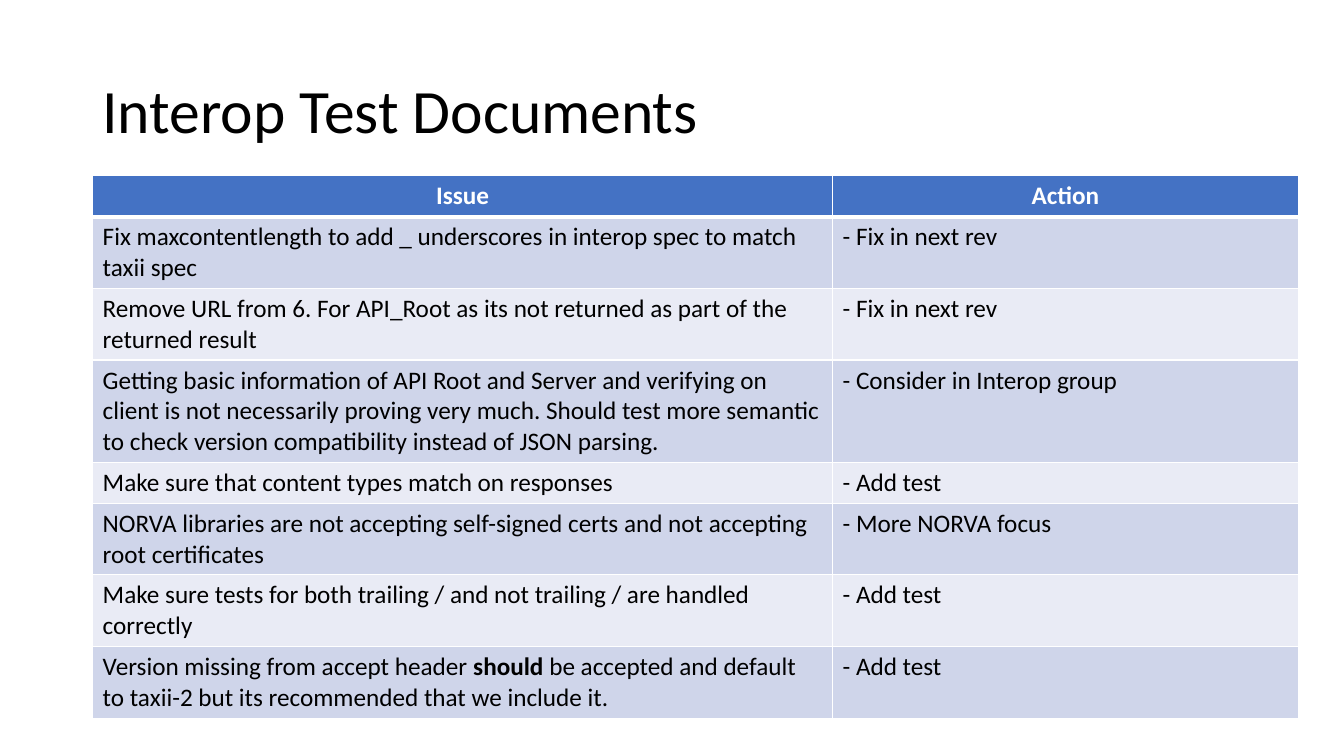
from lxml import etree
from pptx import Presentation
from pptx.dml.color import RGBColor
from pptx.enum.text import MSO_ANCHOR, PP_ALIGN
from pptx.oxml.ns import qn
from pptx.util import Pt

LEFT, CENTER = PP_ALIGN.LEFT, PP_ALIGN.CENTER
MIDDLE = MSO_ANCHOR.MIDDLE

BLACK = RGBColor(0x00, 0x00, 0x00)
WHITE = RGBColor(0xFF, 0xFF, 0xFF)
HEADER_BLUE = RGBColor(0x44, 0x72, 0xC4)
BANDS = (RGBColor(0xCF, 0xD5, 0xEA), RGBColor(0xE9, 0xEB, 0xF5))

FONT = "Calibri"
TITLE_FORMAT = {"name": FONT, "size": Pt(44), "bold": False}
HEADER_FORMAT = {"name": FONT, "size": Pt(18), "bold": True}
BODY_FORMAT = {"name": FONT, "size": Pt(18), "bold": False}

COLUMN_WIDTHS = (528.5, 332.6)
ROW_HEIGHT = 29.2
TABLE_HEIGHT = 382.3

HEADINGS = ("Issue", "Action")
# Words between ** marks are bold
ISSUES = (
    ("Fix maxcontentlength to add _ underscores in interop spec to match taxii spec",
     "- Fix in next rev"),
    ("Remove URL from 6. For API_Root as its not returned as part of the returned result",
     "- Fix in next rev"),
    ("Getting basic information of API Root and Server and verifying on client is not "
     "necessarily proving very much. Should test more semantic to check version "
     "compatibility instead of JSON parsing.",
     "- Consider in Interop group"),
    ("Make sure that content types match on responses", "- Add test"),
    ("NORVA libraries are not accepting self-signed certs and not accepting root certificates",
     "- More NORVA focus"),
    ("Make sure tests for both trailing / and not trailing / are handled correctly",
     "- Add test"),
    ("Version missing from accept header **should** be accepted and default to taxii-2 "
     "but its recommended that we include it.",
     "- Add test"),
)


def write_text(paragraph, text, font_format, color, alignment=LEFT):
    paragraph.alignment = alignment
    for index, part in enumerate(text.split("**")):
        run = paragraph.add_run()
        run.text = part
        for name, value in font_format.items():
            setattr(run.font, name, value)
        run.font.color.rgb = color
        if index % 2:
            run.font.bold = True


def set_borders(cell, bottom_width):
    properties = cell._tc.get_or_add_tcPr()
    widths = {"a:lnL": 1, "a:lnR": 1, "a:lnT": 1, "a:lnB": bottom_width}
    for position, (tag, width) in enumerate(widths.items()):
        line = etree.Element(qn(tag), w=str(Pt(width)))
        fill = etree.SubElement(line, qn("a:solidFill"))
        etree.SubElement(fill, qn("a:srgbClr"), val=str(WHITE))
        properties.insert(position, line)


def fill_cell(cell, text, fill, font_format, color, alignment=LEFT, bottom_width=1):
    cell.fill.solid()
    cell.fill.fore_color.rgb = fill
    set_borders(cell, bottom_width)
    write_text(cell.text_frame.paragraphs[0], text, font_format, color, alignment)


def add_title(slide, text):
    title = slide.shapes.title
    title.left, title.top, title.width, title.height = Pt(66), Pt(28.8), Pt(828), Pt(104.4)
    title.text_frame.vertical_anchor = MIDDLE
    paragraph = title.text_frame.paragraphs[0]
    paragraph.line_spacing = 0.9
    write_text(paragraph, text, TITLE_FORMAT, BLACK)


def add_issue_table(slide):
    frame = slide.shapes.add_table(
        len(ISSUES) + 1, len(HEADINGS),
        Pt(66.2), Pt(125.6), Pt(sum(COLUMN_WIDTHS)), Pt(TABLE_HEIGHT))
    table = frame.table
    for column, width in zip(table.columns, COLUMN_WIDTHS):
        column.width = Pt(width)
    # Rows grow with the number of text lines
    for row in table.rows:
        row.height = Pt(ROW_HEIGHT)

    # Header row
    for column, heading in enumerate(HEADINGS):
        fill_cell(table.cell(0, column), heading, HEADER_BLUE, HEADER_FORMAT, WHITE,
                  CENTER, bottom_width=3)

    # Banded issue rows
    for index, texts in enumerate(ISSUES):
        for column, text in enumerate(texts):
            fill_cell(table.cell(index + 1, column), text, BANDS[index % 2],
                      BODY_FORMAT, BLACK)


def main():
    presentation = Presentation()
    presentation.slide_width, presentation.slide_height = Pt(960), Pt(540)
    title_only_layout = presentation.slide_layouts[5]
    slide = presentation.slides.add_slide(title_only_layout)
    add_title(slide, "Interop Test Documents")
    add_issue_table(slide)
    presentation.save("out.pptx")


if __name__ == "__main__":
    main()
